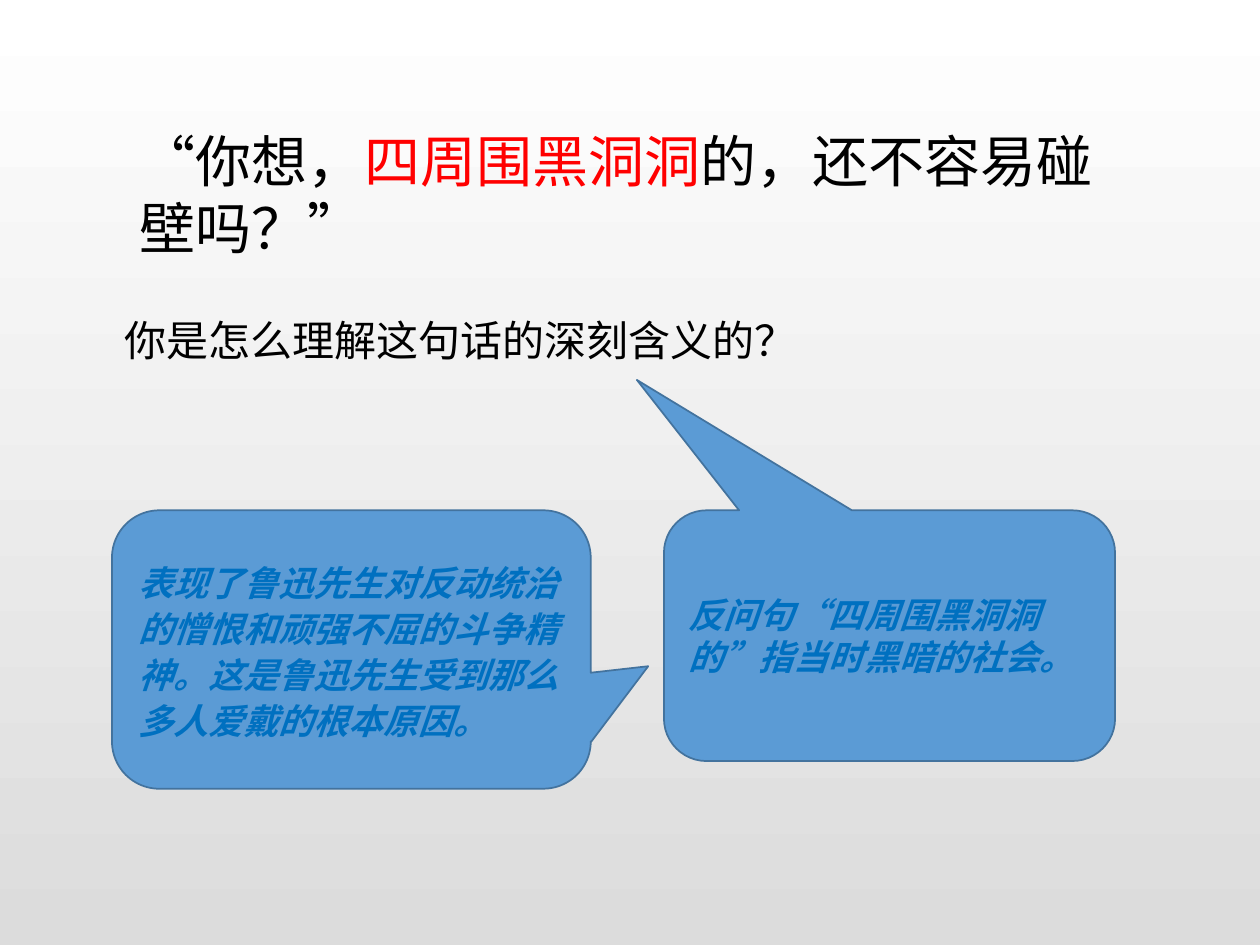
from dataclasses import dataclass

from lxml import etree
from pptx import Presentation
from pptx.dml.color import RGBColor
from pptx.enum.lang import MSO_LANGUAGE_ID
from pptx.enum.shapes import MSO_SHAPE
from pptx.enum.text import MSO_ANCHOR, PP_ALIGN
from pptx.oxml.ns import qn
from pptx.slide import Slide
from pptx.util import Pt

CALLOUT = MSO_SHAPE.ROUNDED_RECTANGULAR_CALLOUT
CHINESE = MSO_LANGUAGE_ID.SIMPLIFIED_CHINESE
LEFT = PP_ALIGN.LEFT
TOP, MIDDLE = MSO_ANCHOR.TOP, MSO_ANCHOR.MIDDLE
TITLE_ONLY = 5

COLORS = {
    "text": "000000",
    "accent": "FF0000",
    "answer": "0070C0",
    "callout": "5B9BD5",
    "outline": "43739E",
    "sky": "FFFFFF",
    "ground": "DCDCDC",
}


def rgb(name):
    return RGBColor.from_string(COLORS[name])


def add_text(paragraph, text, *, font_name, size, color="text", bold=False, italic=False):
    run = paragraph.add_run()
    run.text = text
    font = run.font
    font.size, font.bold, font.italic = Pt(size), bold, italic
    font.color.rgb = rgb(color)
    font.name = font_name
    font.language_id = CHINESE
    east_asian = etree.SubElement(run._r.get_or_add_rPr(), qn("a:ea"))
    east_asian.set("typeface", font_name)


@dataclass
class SlideBuilder:
    """Holds the text style and the slide being filled."""

    slide: Slide
    font_name: str = "Noto Sans CJK SC"

    def background(self, start, end):
        fill = self.slide.background.fill
        fill.gradient()
        fill.gradient_angle = 270
        for stop, color, position in zip(fill.gradient_stops, (start, end), (0, 1)):
            stop.color.rgb = rgb(color)
            stop.position = position

    def fill_text(self, shape, parts, anchor, spacing=1.0, **style):
        frame = shape.text_frame
        frame.word_wrap = True
        frame.vertical_anchor = anchor
        paragraph = frame.paragraphs[0]
        paragraph.alignment = LEFT
        paragraph.line_spacing = spacing
        for text, color in parts:
            add_text(paragraph, text, color=color, font_name=self.font_name, **style)

    def title(self, box, parts):
        quote = self.slide.shapes.title
        quote.left, quote.top, quote.width, quote.height = map(Pt, box)
        self.fill_text(quote, parts, TOP, size=32)

    def label(self, box, text):
        question = self.slide.shapes.add_textbox(*map(Pt, box))
        self.fill_text(question, [(text, "text")], TOP, size=24)

    def callout(self, box, pointer, text, spacing=1.0):
        answer = self.slide.shapes.add_shape(CALLOUT, *map(Pt, box))
        answer.shadow.inherit = False
        for index, value in enumerate((*pointer, 0.17)):
            answer.adjustments[index] = value
        answer.fill.solid()
        answer.fill.fore_color.rgb = rgb("callout")
        answer.line.color.rgb = rgb("outline")
        answer.line.width = Pt(1)
        self.fill_text(
            answer, [(text, "answer")], MIDDLE, spacing, size=20, bold=True, italic=True
        )


def main():
    deck = Presentation()
    deck.slide_width, deck.slide_height = Pt(720), Pt(540)
    builder = SlideBuilder(deck.slides.add_slide(deck.slide_layouts[TITLE_ONLY]))
    margin, answers_top = 64, 291.6

    builder.background("sky", "ground")
    builder.title(
        (72.7, 68.4, 574.6, 85),
        [("“你想，", "text"), ("四周围黑洞洞", "accent"), ("的，还不容易碰壁吗？”", "text")],
    )
    builder.callout(
        (379.4, answers_top, 257.8, 143.3),
        (-0.56, -1.02),
        "反问句“四周围黑洞洞的”指当时黑暗的社会。",
    )
    builder.label((margin, 176.4, 400.3, 36), "你是怎么理解这句话的深刻含义的？")
    builder.callout(
        (margin, answers_top, 273.6, 159.1),
        (0.62, 0.06),
        "表现了鲁迅先生对反动统治的憎恨和顽强不屈的斗争精神。"
        "这是鲁迅先生受到那么多人爱戴的根本原因。",
        spacing=1.1,
    )
    deck.save("out.pptx")


if __name__ == "__main__":
    main()
